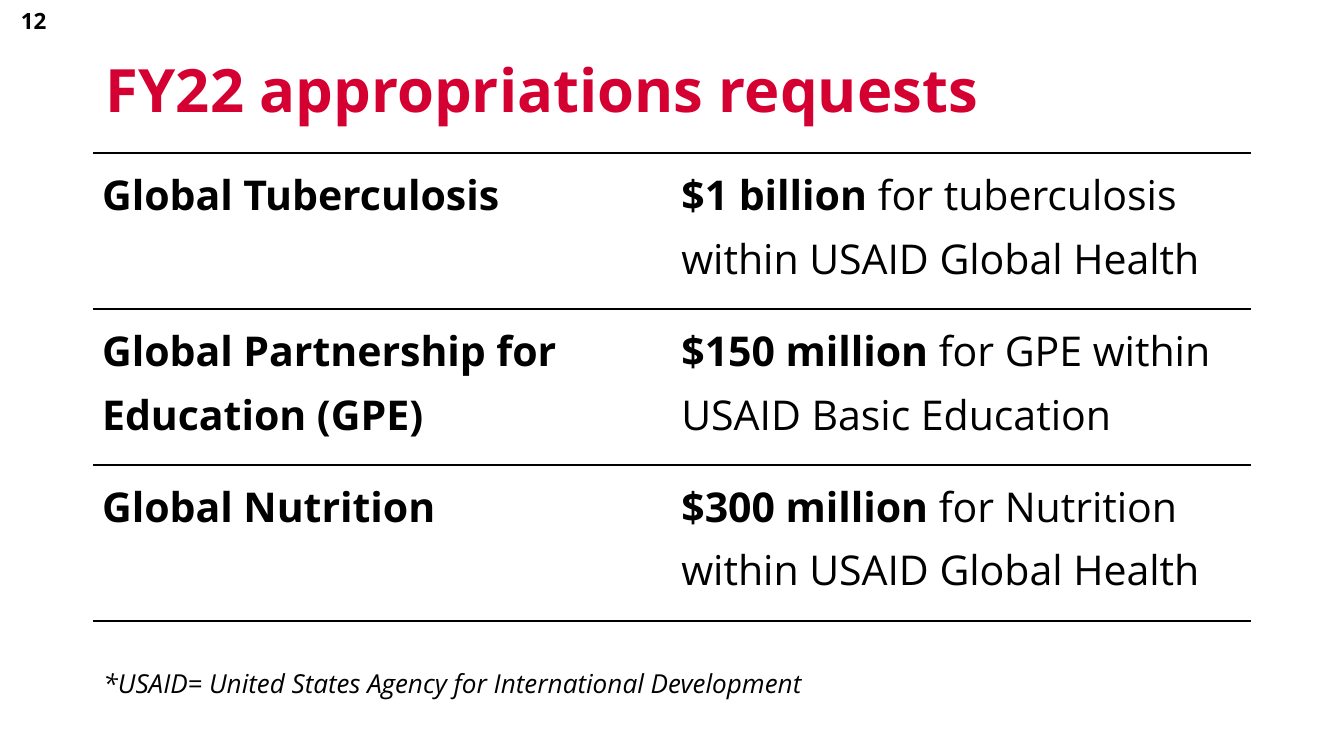
from lxml.etree import SubElement
from pptx import Presentation
from pptx.dml.color import RGBColor
from pptx.enum.text import MSO_ANCHOR as ANCHOR, PP_ALIGN as ALIGN
from pptx.oxml.ns import qn
from pptx.util import Inches, Pt


def add_run(p, text, size, color="000000", bold=False, italic=False):
    r = p.add_run()
    r.text = text
    r.font.name = "Open Sans"
    r.font.size = Pt(size)
    r.font.bold = bold
    r.font.italic = italic
    r.font.color.rgb = RGBColor.from_string(color)


def add_box(left, top, width, height, inset_x=0.1, inset_y=0.05):
    sp = s.shapes.add_textbox(Inches(left), Inches(top), Inches(width), Inches(height))
    tf = sp.text_frame
    tf.word_wrap = True
    tf.vertical_anchor = ANCHOR.MIDDLE
    tf.margin_left = tf.margin_right = Inches(inset_x)
    tf.margin_top = tf.margin_bottom = Inches(inset_y)
    return tf.paragraphs[0]


# Widescreen 16:9 slide
prs = Presentation()
prs.slide_width = Inches(10)
prs.slide_height = Inches(10) * 9 // 16
s = prs.slides.add_slide(prs.slide_layouts[6])

# Title
p = add_box(0.69, 0.3, 8.62, 0.72)
add_run(p, "FY22 appropriations requests", 32, "D50032", bold=True)

# Requests table: program, amount, purpose
requests = [
    ("Global Tuberculosis", "$1 billion ", "for tuberculosis within USAID Global Health"),
    ("Global Partnership for Education (GPE)", "$150 million ", "for GPE within USAID Basic Education"),
    ("Global Nutrition", "$300 million ", "for Nutrition within USAID Global Health"),
]
table = s.shapes.add_table(len(requests), 2, Inches(0.69), Inches(1.14),
                           Inches(8.62), Inches(3.48)).table
table.first_row = table.horz_banding = False

for i, (program, amount, purpose) in enumerate(requests):
    for j, runs in enumerate([[(program, True)], [(amount, True), (purpose, False)]]):
        cell = table.cell(i, j)
        cell.margin_left = cell.margin_right = Inches(0.07)
        cell.margin_top = cell.margin_bottom = Inches(0.04)

        # Horizontal rules only
        tcPr = cell._tc.get_or_add_tcPr()
        for side in ("lnL", "lnR"):
            SubElement(SubElement(tcPr, qn(f"a:{side}")), qn("a:noFill"))
        for side in ("lnT", "lnB"):
            ln = SubElement(tcPr, qn(f"a:{side}"), w=str(Pt(1)))
            SubElement(SubElement(ln, qn("a:solidFill")), qn("a:srgbClr"), val="000000")
        cell.fill.solid()
        cell.fill.fore_color.rgb = RGBColor.from_string("FFFFFF")

        p = cell.text_frame.paragraphs[0]
        p.line_spacing = 1.14
        for text, bold in runs:
            add_run(p, text, 22, bold=bold)

# Footnote
p = add_box(0.7, 4.74, 8.62, 0.72, 0.07, 0.04)
p.line_spacing = 0.9
add_run(p, "*USAID= United States Agency for International Development", 14, italic=True)

# Slide number
p = add_box(0, 0, 0.5, 0.3)
p.alignment = ALIGN.CENTER
add_run(p, "12", 12, bold=True)

prs.save("out.pptx")
